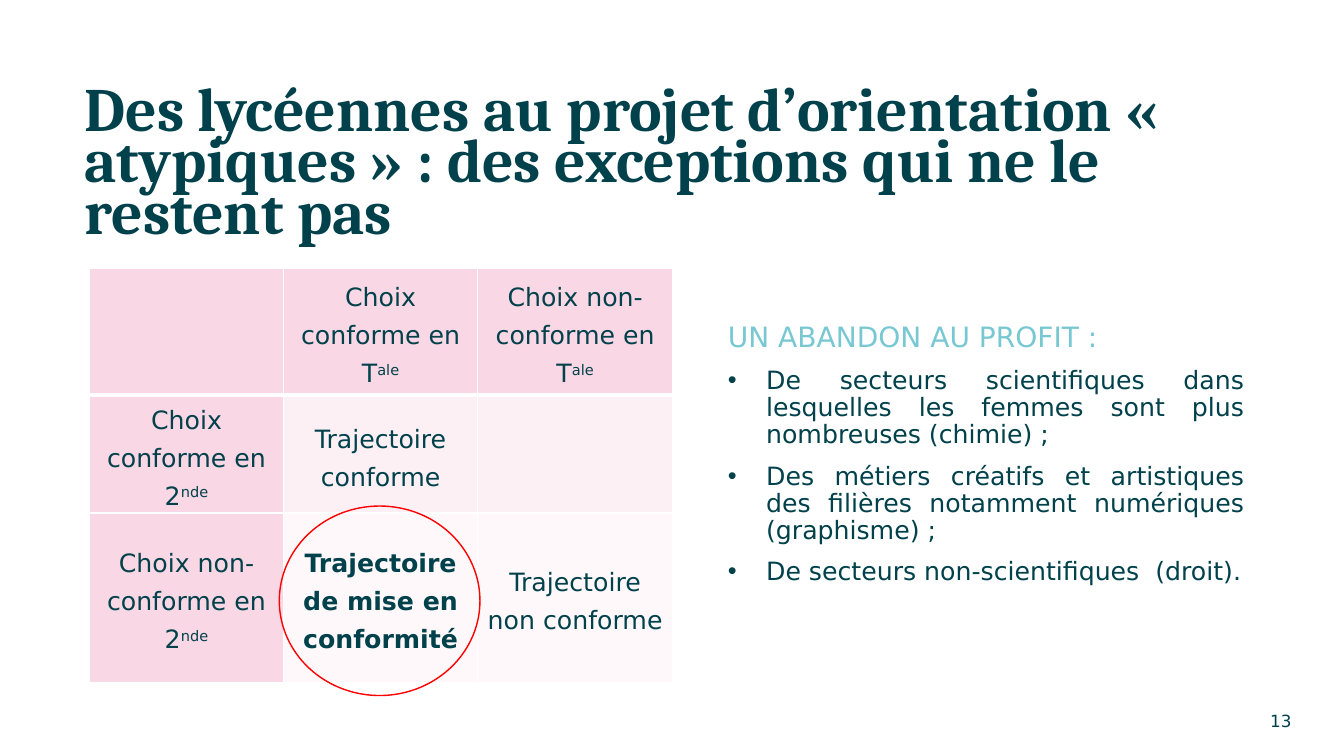
from lxml.etree import SubElement as Sub
from pptx import Presentation
from pptx.dml.color import RGBColor
from pptx.enum.shapes import MSO_SHAPE as Shape
from pptx.enum.text import MSO_ANCHOR as Anchor, PP_ALIGN as Align
from pptx.oxml.ns import qn
from pptx.util import Inches, Pt

TEAL = RGBColor(0x01, 0x41, 0x4B)
AQUA = RGBColor(0x77, 0xC8, 0xD3)
RED = RGBColor(0xFF, 0x00, 0x00)
ROSE = RGBColor(0xFA, 0xD7, 0xE4)
PINK = RGBColor(0xFD, 0xF0, 0xF5)
PALE = RGBColor(0xFE, 0xF8, 0xFA)
SERIF, SANS = "Cambria", "DejaVu Sans"

TITLE = ("Des lycéennes au projet d’orientation « atypiques » : "
         "des exceptions qui ne le restent pas")
PAGE = "13"
HEAD = "UN ABANDON AU PROFIT :"
POINTS = [
    "De secteurs scientifiques dans lesquelles les femmes sont plus "
    "nombreuses (chimie) ; ",
    "Des métiers créatifs et artistiques des filières notamment "
    "numériques (graphisme) ;",
    "De secteurs non-scientifiques  (droit).",
]
# Each cell: text, superscript
GRID = [
    [("", ""), ("Choix conforme en T", "ale"),
     ("Choix non-conforme en T", "ale")],
    [("Choix conforme en 2", "nde"), ("Trajectoire conforme", ""), ("", "")],
    [("Choix non-conforme en 2", "nde"),
     ("Trajectoire de mise en conformité", ""),
     ("Trajectoire non conforme", "")],
]
FILLS = [ROSE, PINK, PALE]
COLS = [1.92, 1.93, 1.93]
ROWS = [1.26, 1.13, 1.68]
KEY = (2, 1)


def write(para, text, size=18, font=SANS, color=TEAL, bold=False,
          align=Align.LEFT, line=1.0, before=0, sup="", bullet=False):
    """Fill a paragraph with text and an optional superscript ending."""
    props = para._p.get_or_add_pPr()
    if bullet:
        props.set("marL", str(Inches(0.38)))
        props.set("indent", str(-Inches(0.38)))
        Sub(props, qn("a:buFont"), typeface="Arial")
        Sub(props, qn("a:buChar"), char="•")
    para.alignment = align
    para.line_spacing = line
    para.space_before = Pt(before)
    for part, base in ((text, 0), (sup, 30000)):
        if not part:
            continue
        run = para.add_run()
        run.text = part
        run.font.size, run.font.name = Pt(size), font
        run.font.bold = bold
        run.font.color.rgb = color
        if base:
            run._r.get_or_add_rPr().set("baseline", str(base))


def add_box(slide, x, y, w, h, anchor=Anchor.TOP):
    box = slide.shapes.add_textbox(Inches(x), Inches(y), Inches(w), Inches(h))
    frame = box.text_frame
    frame.word_wrap = True
    frame.vertical_anchor = anchor
    return frame


def set_edges(cell, widths):
    """Draw white borders; widths maps a side to points."""
    props = cell._tc.get_or_add_tcPr()
    for spot, (side, width) in enumerate(widths.items()):
        edge = props.makeelement(qn("a:ln" + side), {"w": str(Pt(width))})
        fill = Sub(edge, qn("a:solidFill"))
        Sub(fill, qn("a:srgbClr"), val="FFFFFF")
        props.insert(spot, edge)


def add_grid(slide):
    frame = slide.shapes.add_table(
        len(ROWS), len(COLS), Inches(0.89), Inches(2.66),
        Inches(sum(COLS)), Inches(sum(ROWS)))
    table = frame.table
    table.first_row = table.horz_banding = False
    for col, width in zip(table.columns, COLS):
        col.width = Inches(width)
    for r, line in enumerate(GRID):
        table.rows[r].height = Inches(ROWS[r])
        for c, (text, sup) in enumerate(line):
            cell = table.cell(r, c)
            cell.margin_left = cell.margin_right = Inches(0.07)
            cell.margin_top = cell.margin_bottom = 0
            cell.vertical_anchor = Anchor.MIDDLE
            cell.fill.solid()
            cell.fill.fore_color.rgb = ROSE if c == 0 else FILLS[r]
            set_edges(cell, {"L": 1, "R": 1, "T": 1, "B": 1 if r else 3})
            write(cell.text_frame.paragraphs[0], text, sup=sup, line=1.3,
                  align=Align.CENTER, bold=(r, c) == KEY)


def main():
    deck = Presentation()
    deck.slide_width, deck.slide_height = Inches(13.33), Inches(7.5)
    slide = deck.slides.add_slide(deck.slide_layouts[6])

    title = add_box(slide, 0.74, 0.84, 11.73, 1.16)
    write(title.paragraphs[0], TITLE, size=44, font=SERIF, bold=True, line=0.7)
    page = add_box(slide, 12.5, 6.95, 0.83, 0.4, Anchor.MIDDLE)
    write(page.paragraphs[0], PAGE, size=12)

    add_grid(slide)

    body = add_box(slide, 7.12, 3.16, 5.32, 3.26)
    write(body.paragraphs[0], HEAD, size=20, color=AQUA, line=0.9)
    for point in POINTS:
        write(body.add_paragraph(), point, align=Align.JUSTIFY, line=0.9,
              before=10, bullet=True)

    ring = slide.shapes.add_shape(
        Shape.OVAL, Inches(2.77), Inches(5.02), Inches(1.99), Inches(1.88))
    ring.shadow.inherit = False
    ring.fill.background()
    ring.line.color.rgb = RED
    ring.line.width = Pt(1)

    deck.save("out.pptx")


if __name__ == "__main__":
    main()
